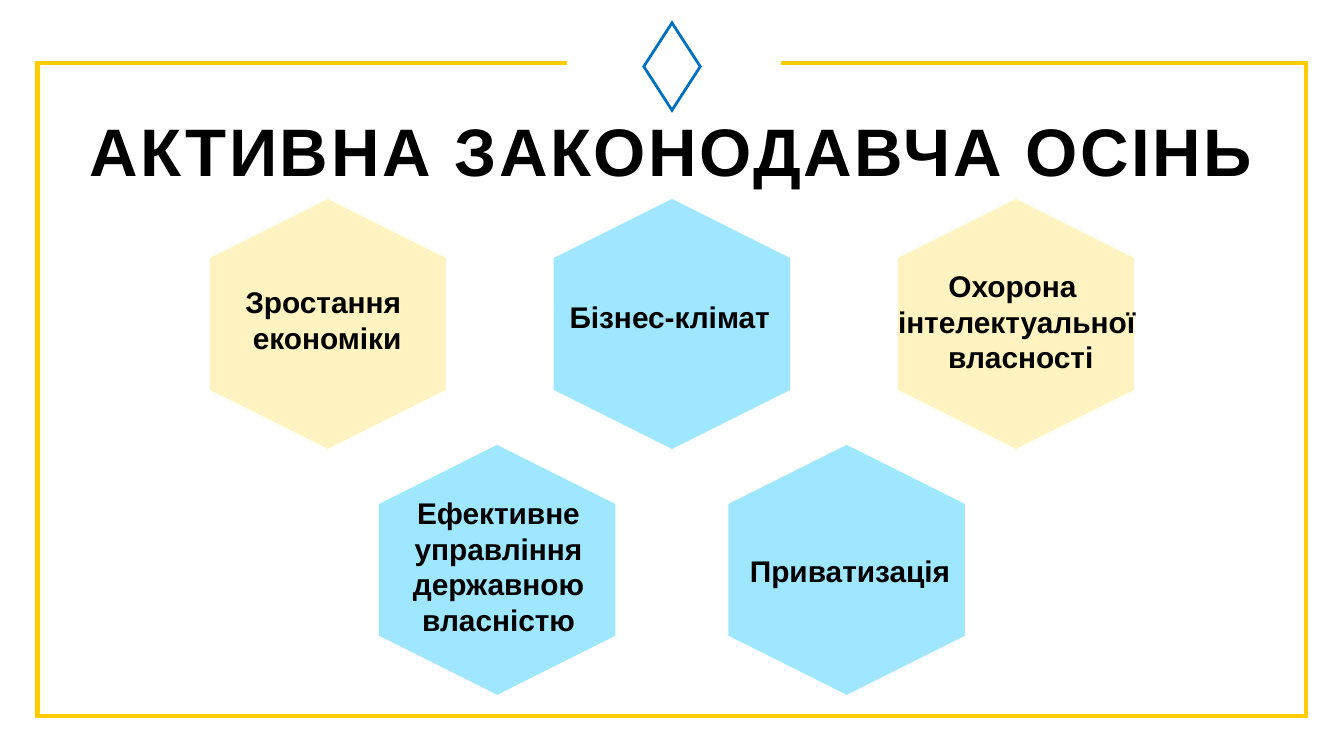
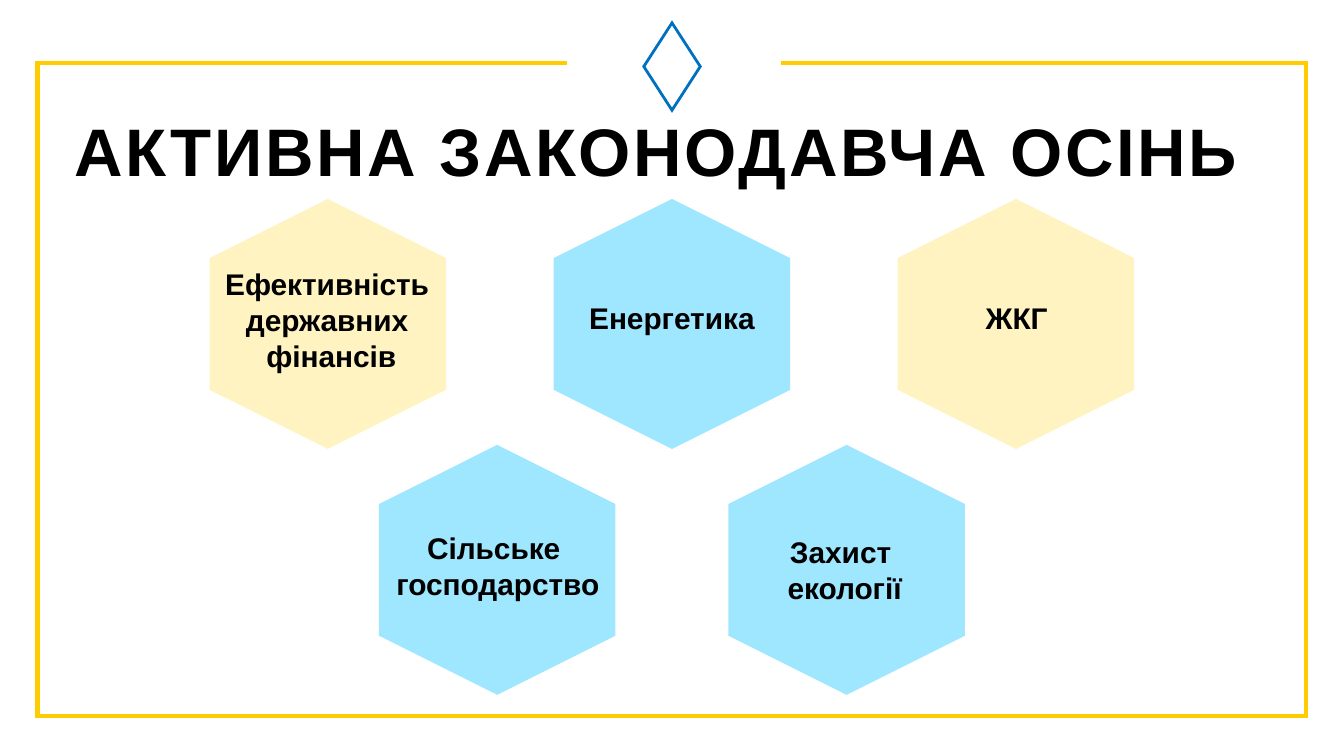
from dataclasses import dataclass

from lxml import etree
from pptx import Presentation
from pptx.dml.color import RGBColor
from pptx.enum.shapes import MSO_SHAPE
from pptx.enum.text import MSO_ANCHOR, MSO_AUTO_SIZE, PP_ALIGN
from pptx.oxml.ns import qn
from pptx.util import Inches, Pt

HEXAGON = MSO_SHAPE.HEXAGON
DIAMOND = MSO_SHAPE.DIAMOND
CENTER = PP_ALIGN.CENTER
JUSTIFY = PP_ALIGN.JUSTIFY
TOP = MSO_ANCHOR.TOP
FIT_SHAPE = MSO_AUTO_SIZE.SHAPE_TO_FIT_TEXT
TITLE_ONLY = 5


@dataclass(frozen=True)
class Theme:
    font: str = "Arial"
    text: RGBColor = RGBColor(0, 0, 0)
    blue: RGBColor = RGBColor(0x9F, 0xE6, 0xFF)
    cream: RGBColor = RGBColor(0xFF, 0xF3, 0xC1)
    gold: RGBColor = RGBColor(0xFF, 0xCC, 0x00)
    emblem: RGBColor = RGBColor(0x00, 0x70, 0xC0)
    title_size: Pt = Pt(36)
    title_leading: Pt = Pt(35)
    title_tracking: int = 140
    label_size: Pt = Pt(16)
    frame_width: Pt = Pt(2.25)
    emblem_width: Pt = Pt(1.5)


THEME = Theme()
PAGE_WIDTH = Inches(10)
PAGE_HEIGHT = PAGE_WIDTH * 9 // 16
TITLE = "АКТИВНА ЗАКОНОДАВЧА ОСІНЬ"
FRAME = [(4.22, 0.47), (0.28, 0.47), (0.28, 5.33), (9.72, 5.33), (9.72, 0.47), (5.81, 0.47)]
HEXAGON_WIDTH, HEXAGON_HEIGHT = 1.86, 1.76
TOP_ROW, BOTTOM_ROW = 1.53, 3.36
HEXAGONS = [
    (4.07, TOP_ROW, THEME.blue),
    (1.51, TOP_ROW, THEME.cream),
    (6.63, TOP_ROW, THEME.cream),
    (2.77, BOTTOM_ROW, THEME.blue),
    (5.37, BOTTOM_ROW, THEME.blue),
]
LABEL_PADDING, LABEL_LINE = 0.1, 0.27

PAGES = [
    ((0.46, 9.07), [
        (4.14, 2.17, 1.74, ["Бізнес-клімат"], JUSTIFY),
        (6.58, 1.94, 1.97, ["Охорона ", "інтелектуальної", " власності"]),
        (1.71, 2.06, 1.45, ["Зростання ", "економіки"]),
        (2.96, 3.63, 1.5, ["Ефективне", "управління", "державною", "власністю"]),
        (5.47, 4.06, 1.71, ["Приватизація"]),
    ]),
    ((0.28, 9.21), [
        (4.26, 2.18, 1.48, ["Енергетика"]),
        (7.2, 2.18, 0.73, ["ЖКГ"]),
        (2.83, 3.89, 1.75, ["Сільське ", "господарство"]),
        (5.74, 3.92, 1.09, ["Захист \nекології"]),
        (1.57, 1.93, 1.79, ["Ефективність ", "державних ", "фінансів"]),
    ]),
]


class Builder:
    def __init__(self, deck, theme):
        self.deck = deck
        self.theme = theme
        self.page = None

    def new_page(self):
        self.page = self.deck.slides.add_slide(self.deck.slide_layouts[TITLE_ONLY])

    def span(self, para, text, size):
        span = para.add_run()
        span.text = text
        span.font.name = self.theme.font
        span.font.size = size
        span.font.bold = True
        span.font.color.rgb = self.theme.text
        return span

    def title(self, text, left, width):
        box = self.page.shapes.title
        box.left, box.top = Inches(left), Inches(0.93)
        box.width, box.height = Inches(width), Inches(0.49)
        frame = box.text_frame
        frame.margin_left = frame.margin_right = 0
        frame.margin_top = frame.margin_bottom = 0
        frame.vertical_anchor = TOP
        frame.word_wrap = True
        frame.auto_size = FIT_SHAPE
        para = frame.paragraphs[0]
        para.alignment = CENTER
        para.line_spacing = self.theme.title_leading
        span = self.span(para, text, self.theme.title_size)
        span.font._element.set("spc", str(self.theme.title_tracking))

    def border(self, points):
        start, *rest = [(Inches(x), Inches(y)) for x, y in points]
        outline = self.page.shapes.build_freeform(*start)
        outline.add_line_segments(rest, close=False)
        self.outlined(outline.convert_to_shape(), self.theme.gold, self.theme.frame_width)

    def emblem(self):
        shape = self.page.shapes.add_shape(
            DIAMOND, Inches(4.79), Inches(0.17), Inches(0.42), Inches(0.65))
        self.outlined(shape, self.theme.emblem, self.theme.emblem_width)

    def outlined(self, shape, color, width):
        shape.shadow.inherit = False
        shape.fill.background()
        shape.line.color.rgb = color
        shape.line.width = width
        line = shape._element.spPr.find(qn("a:ln"))
        etree.SubElement(line, qn("a:miter"), lim="800000")

    def hexagon(self, left, top, color):
        shape = self.page.shapes.add_shape(
            HEXAGON, Inches(left), Inches(top), Inches(HEXAGON_WIDTH), Inches(HEXAGON_HEIGHT))
        shape.rotation = 270
        shape.shadow.inherit = False
        shape.fill.solid()
        shape.fill.fore_color.rgb = color
        shape.line.fill.background()

    def label(self, left, top, width, paragraphs, alignment=CENTER):
        line_count = sum(len(text.split("\n")) for text in paragraphs)
        height = LABEL_PADDING + LABEL_LINE * line_count
        box = self.page.shapes.add_textbox(
            Inches(left), Inches(top), Inches(width), Inches(height))
        frame = box.text_frame
        frame.word_wrap = False
        frame.auto_size = FIT_SHAPE
        for index, text in enumerate(paragraphs):
            para = frame.add_paragraph() if index else frame.paragraphs[0]
            para.alignment = alignment
            for position, line in enumerate(text.split("\n")):
                if position:
                    para.add_line_break()
                self.span(para, line, self.theme.label_size)


def main():
    deck = Presentation()
    deck.slide_width, deck.slide_height = PAGE_WIDTH, PAGE_HEIGHT
    builder = Builder(deck, THEME)
    for title_place, labels in PAGES:
        builder.new_page()
        builder.border(FRAME)
        builder.emblem()
        builder.title(TITLE, *title_place)
        for hexagon in HEXAGONS:
            builder.hexagon(*hexagon)
        for label in labels:
            builder.label(*label)
    deck.save("out.pptx")


if __name__ == "__main__":
    main()
